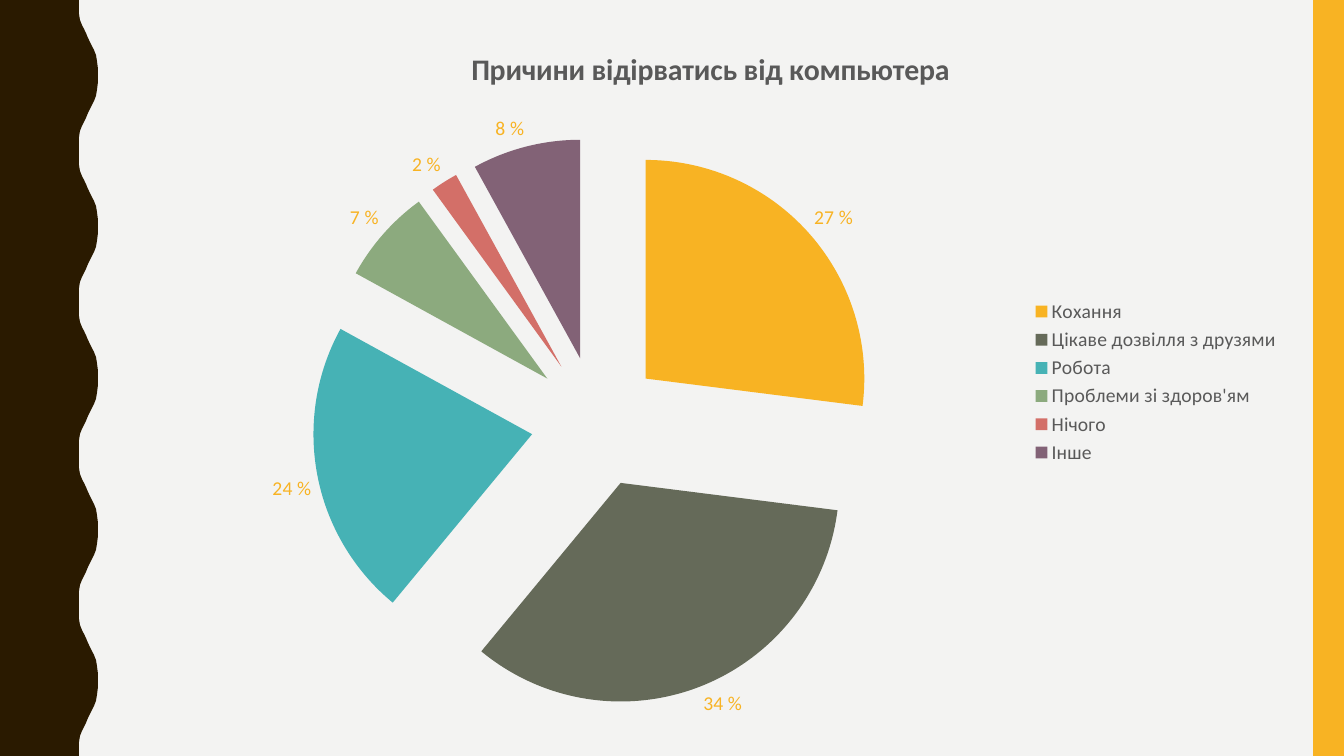
"""Build a slide with an exploded pie chart between a wavy band and a bar."""
from lxml.etree import SubElement
from pptx import Presentation
from pptx.chart.data import CategoryChartData as Data
from pptx.dml.color import RGBColor
from pptx.enum.chart import XL_CHART_TYPE as Kind, XL_LABEL_POSITION as Spot
from pptx.enum.chart import XL_LEGEND_POSITION as Side
from pptx.enum.shapes import MSO_SHAPE as Shape
from pptx.oxml.ns import qn
from pptx.util import Pt

PX = 914400 / 100.8
WIDE, HIGH = 1344, 756
WAVES = 5
PAPER = RGBColor(0xF3, 0xF3, 0xF2)
BROWN = RGBColor(0x2A, 0x1A, 0x00)
GOLD = RGBColor(0xF8, 0xB3, 0x23)
GREY = RGBColor(0x59, 0x59, 0x59)
OLIVE = RGBColor(0x65, 0x6A, 0x59)
TEAL = RGBColor(0x46, 0xB2, 0xB5)
GREEN = RGBColor(0x8C, 0xAA, 0x7E)
RED = RGBColor(0xD3, 0x6F, 0x68)
PLUM = RGBColor(0x82, 0x62, 0x76)

TITLE = "Причини відірватись від компьютера"
ROWS = [
    ("Кохання", 27, "27 %", GOLD),
    ("Цікаве дозвілля з друзями", 34, "34 %", OLIVE),
    ("Робота", 22, "24 %", TEAL),
    ("Проблеми зі здоров'ям", 7, "7 %", GREEN),
    ("Нічого", 2, "2 %", RED),
    ("Інше", 8, "8 %", PLUM),
]
CREST = [(79, 0), (79, 7), (79, 14), (80, 20), (82, 25), (84, 29), (86, 33),
         (88, 38), (90, 42), (92, 46), (94, 50), (96, 55), (97, 61), (98, 69)]
HEAD = {"size": Pt(21.3), "bold": True, "name": "Calibri"}
BODY = {"size": Pt(14), "bold": False, "name": "Calibri"}


def emu(*sizes):
    """Turn px into EMU."""
    return [round(size * PX) for size in sizes]


def style(font, form, tint):
    """Set the font from a dict of values and a colour."""
    for key, value in form.items():
        setattr(font, key, value)
    font.color.rgb = tint


def paint(shape, tint):
    """Give a shape a plain fill with no line or shadow."""
    shape.shadow.inherit = False
    shape.fill.solid()
    shape.fill.fore_color.rgb = tint
    shape.line.fill.background()


def add_wave(slide):
    """Draw the left band with its wavy edge."""
    step = HIGH / WAVES
    turn = [(x, step - y) for x, y in reversed(CREST)]
    edge = [(x, wave * step + y) for wave in range(WAVES)
            for x, y in CREST + [(98, step / 2)] + turn]
    pen = slide.shapes.build_freeform(0, 0, scale=PX)
    pen.add_line_segments(edge + [(0, HIGH)], close=True)
    paint(pen.convert_to_shape(), BROWN)


def add_bar(slide):
    """Draw the right bar."""
    bar = slide.shapes.add_shape(Shape.RECTANGLE, *emu(1313, 0, 31, HIGH))
    paint(bar, GOLD)


def add_pie(slide):
    """Add the pie with its title, legend and labels."""
    data = Data()
    data.categories = [row[0] for row in ROWS]
    data.add_series(TITLE, [row[1] for row in ROWS])
    frame = slide.shapes.add_chart(Kind.PIE, *emu(130, 24, 1161, 716), data)
    chart = frame.chart
    style(chart.font, BODY, GREY)
    chart.has_title = True
    head = chart.chart_title.text_frame
    head.text = TITLE
    style(head.paragraphs[0].runs[0].font, HEAD, GREY)
    chart.has_legend = True
    chart.legend.position = Side.RIGHT
    chart.legend.include_in_layout = False
    style(chart.legend.font, BODY, GREY)
    plot = chart.plots[0]
    plot.vary_by_categories = True
    pie = plot.series[0]
    for index, (_, _, text, tint) in enumerate(ROWS):
        point = pie.points[index]
        point.format.fill.solid()
        point.format.fill.fore_color.rgb = tint
        label = point.data_label
        label.text_frame.text = text
        style(label.text_frame.paragraphs[0].runs[0].font, BODY, GOLD)
        label.position = Spot.OUTSIDE_END
    node = pie._element
    burst = SubElement(node, qn("c:explosion"), val="30")
    node.find(qn("c:dPt")).addprevious(burst)


def main():
    """Build and save the slide."""
    deck = Presentation()
    deck.slide_width, deck.slide_height = emu(WIDE, HIGH)
    slide = deck.slides.add_slide(deck.slide_layouts[6])
    slide.background.fill.solid()
    slide.background.fill.fore_color.rgb = PAPER
    add_wave(slide)
    add_bar(slide)
    add_pie(slide)
    deck.save("out.pptx")


if __name__ == "__main__":
    main()
